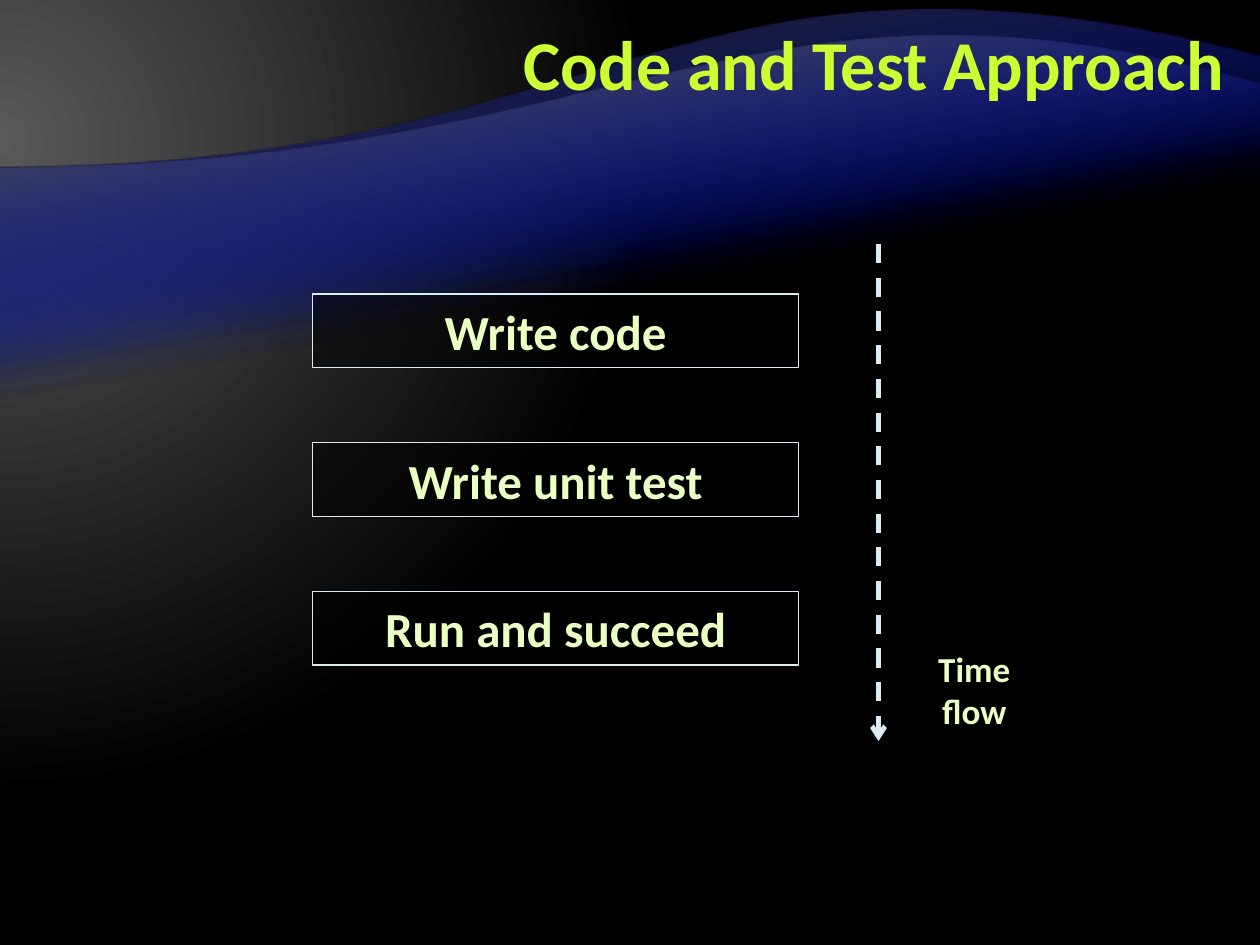
from pptx import Presentation
from pptx.dml.color import RGBColor
from pptx.enum.dml import MSO_LINE
from pptx.enum.shapes import MSO_CONNECTOR, MSO_SHAPE
from pptx.enum.text import MSO_ANCHOR, MSO_AUTO_SIZE, PP_ALIGN
from pptx.oxml import parse_xml
from pptx.oxml.ns import nsdecls, qn
from pptx.util import Pt

TITLE = "Code and Test Approach"
STEPS = ["Write code", "Write unit test", "Run and succeed"]
LABEL = "Time flow"
WIDE, HIGH = 720, 540
LEFT_Y = 96  # both waves meet the left edge here

# right edge y, bottom y, two curve controls, crest colour
WAVES = [
    (32.4, 470.2, [(360, 96), (384.5, -54)], "262626"),
    (48.2, 401, [(360, 96), (430.6, -35.3)], "595959"),
]
GLOW = ('<a:path path="circle"><a:fillToRect l="20000" t="30000" '
        'r="135000" b="100000"/></a:path>')
SLOPE = '<a:lin ang="15600000" scaled="0"/>'  # 260 degrees
SHADOW = ('<a:outerShdw blurRad="38100" dist="25400" dir="2700000">'
          '<a:srgbClr val="000000"><a:alpha val="60000"/></a:srgbClr>'
          '</a:outerShdw>')


def rgb(code):
    return RGBColor.from_string(code)


def node(tag, body="", attrs=""):
    return parse_xml(f"<a:{tag} {nsdecls('a')} {attrs}>{body}</a:{tag}>")


def shade(fill, host, stops, way):
    """Give host a gradient of (percent, colour, opacity) stops."""
    fill.solid()
    body = "".join(
        f'<a:gs pos="{pos * 1000}"><a:srgbClr val="{code}">'
        f'<a:alpha val="{alpha * 1000}"/></a:srgbClr></a:gs>'
        for pos, code, alpha in stops)
    old = next(host.iter(qn("a:solidFill")))
    old.getparent().replace(old, node(
        "gradFill", f"<a:gsLst>{body}</a:gsLst>{way}", 'rotWithShape="1"'))


def style(para, size, code, align):
    para.alignment = align
    font = para.font
    font.name, font.size, font.bold = "Calibri", Pt(size), True
    font.color.rgb = rgb(code)


def write(shape, text, size):
    frame = shape.text_frame
    frame.word_wrap = True
    frame.auto_size = MSO_AUTO_SIZE.SHAPE_TO_FIT_TEXT
    frame.text = text
    style(frame.paragraphs[0], size, "EBFFC2", PP_ALIGN.CENTER)


def add_wave(shapes, right, base, bends, crest):
    pen = shapes.build_freeform(Pt(WIDE), Pt(base))
    pen.add_line_segments(
        [(Pt(0), Pt(base)), (Pt(0), Pt(LEFT_Y)), (Pt(WIDE), Pt(right))])
    wave = pen.convert_to_shape()
    wave.shadow.inherit = False
    wave.line.fill.background()
    edge = list(wave._element.iter(qn("a:lnTo")))[2]
    points = "".join(f'<a:pt x="{Pt(x)}" y="{Pt(y - right)}"/>'
                     for x, y in bends + [(WIDE, right)])
    edge.getparent().replace(edge, node("cubicBezTo", points))
    shade(wave.fill, wave._element,
          [(65, "000D9E", 0), (100, crest, 100)], SLOPE)


deck = Presentation()
deck.slide_width, deck.slide_height = Pt(WIDE), Pt(HIGH)
slide = deck.slides.add_slide(deck.slide_layouts[5])
shapes = slide.shapes
shade(slide.background.fill, slide._element,
      [(0, "595959", 100), (83, "000000", 100)], GLOW)

for wave in WAVES * 2:
    add_wave(shapes, *wave)

for i, step in enumerate(STEPS):
    box = shapes.add_shape(MSO_SHAPE.RECTANGLE, Pt(178.5), Pt(168 + 85 * i),
                           Pt(278), Pt(42))
    box.shadow.inherit = False
    box.fill.solid()
    box.fill.fore_color.rgb = rgb("000000")
    tint = next(box._element.spPr.iter(qn("a:srgbClr")))
    tint.append(node("alpha", attrs='val="50000"'))
    box.line.color.rgb = rgb("DAEDF2")
    box.line.width = Pt(0.75)
    write(box, step, 28)

title = shapes.title
title.left, title.top = Pt(201.5), Pt(8.5)
title.width, title.height = Pt(505), Pt(62.5)
title.text_frame.text = TITLE
title.text_frame.vertical_anchor = MSO_ANCHOR.MIDDLE
head = title.text_frame.paragraphs[0]
style(head, 40, "CCFF33", PP_ALIGN.RIGHT)
head.line_spacing = Pt(40)
head.runs[0]._r.get_or_add_rPr().append(node("effectLst", SHADOW))
shapes._spTree.append(title._element)  # in front of the waves

arrow = shapes.add_connector(MSO_CONNECTOR.STRAIGHT, Pt(502), Pt(139.5),
                             Pt(502), Pt(423.5))
arrow.line.color.rgb = rgb("DAEDF2")
arrow.line.width = Pt(2.75)
arrow.line.dash_style = MSO_LINE.DASH
arrow.line._get_or_add_ln().append(node("tailEnd", attrs='type="arrow"'))
arrow._element.spPr.append(node("effectLst"))

label = shapes.add_textbox(Pt(510), Pt(366.5), Pt(93.5), Pt(55.5))
write(label, LABEL, 20)

deck.save("out.pptx")
